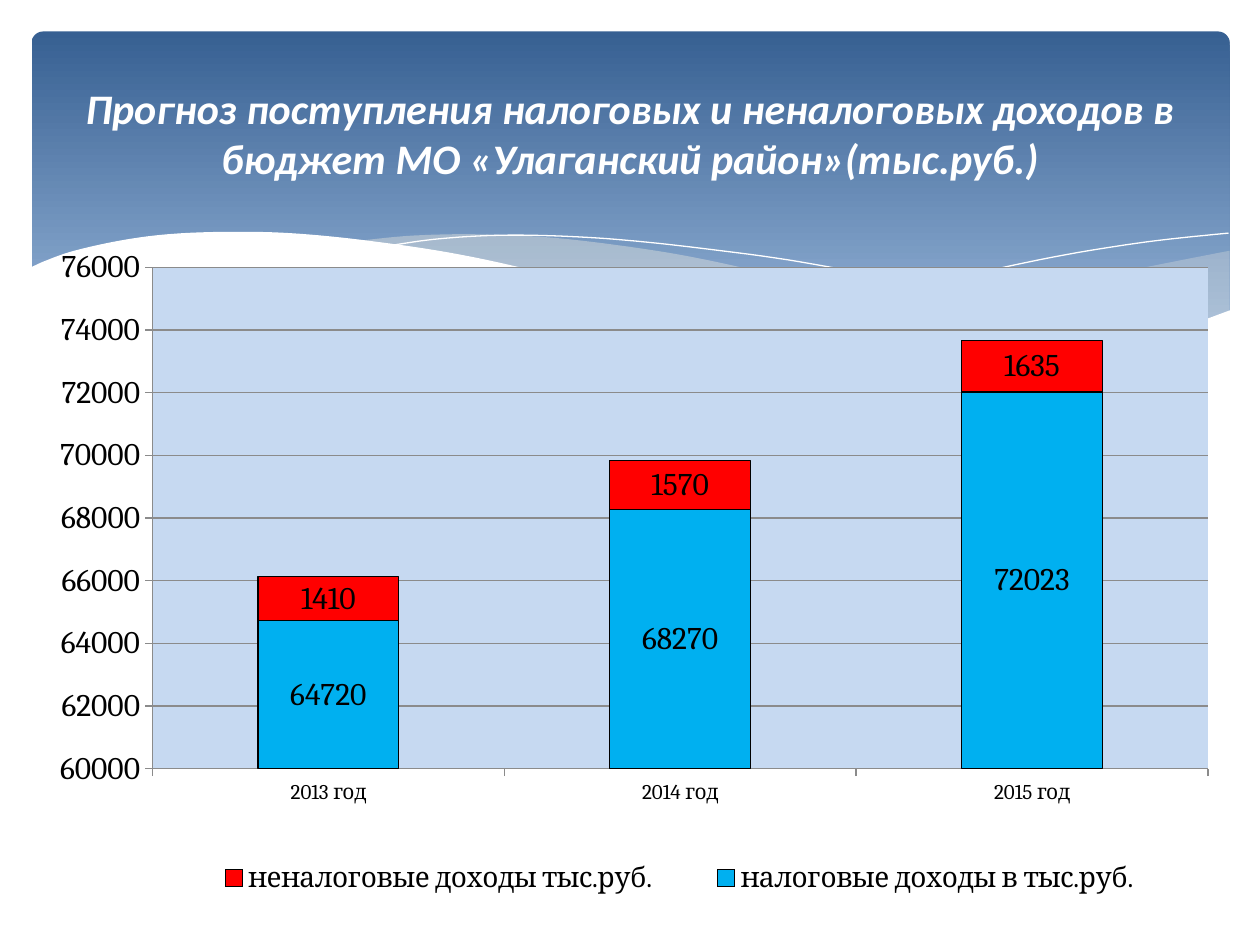
"""Build a slide with a stacked column chart of forecast budget revenue under a wavy banner."""
from dataclasses import dataclass
from typing import Optional

from lxml.etree import SubElement
from pptx import Presentation
from pptx.chart.data import CategoryChartData
from pptx.dml.color import RGBColor
from pptx.enum.chart import XL_CHART_TYPE, XL_LEGEND_POSITION, XL_TICK_MARK
from pptx.enum.shapes import MSO_SHAPE
from pptx.enum.text import MSO_ANCHOR, PP_ALIGN
from pptx.oxml.ns import qn
from pptx.util import Inches, Pt

COLORS = {
    "white": "FFFFFF", "black": "000000", "mist": "EEECE1", "deep": "376092",
    "pale": "95B3D7", "plot": "C6D9F1", "axis": "8B8B8B", "tax": "00B0F0", "other": "FF0000",
}
COLUMNS, ROWS = 100, 75
WIDTH, HEIGHT = Inches(10), Inches(7.5)
STEPS = 8

Point = tuple[float, float]


@dataclass(frozen=True)
class Wave:
    """Smooth edges joined end to end, in grid columns and rows; no fill means an open line."""
    edges: list[list[Point]]
    fill: Optional[str] = None
    opacity: int = 100


@dataclass(frozen=True)
class Series:
    """One stacked part of the columns."""
    name: str
    values: tuple[int, ...]
    color: str


WAVES = [
    Wave([[(97.6, 19.9), (93.5, 20.7), (89.1, 21.6), (83.2, 23), (75.3, 24.8), (66.1, 26.5)],
          [(66.1, 26.5), (71.8, 27.2), (76.9, 27.7), (81.4, 27.8), (86.3, 27.5), (90.5, 26.9),
           (94.2, 25.9), (97.6, 24.7)]], "mist", 29),
    Wave([[(89.3, 27.3), (83.7, 26.5), (77.5, 25.4), (70.6, 24), (62.9, 22.2), (56.9, 20.8),
           (51.4, 19.8), (44.2, 18.9), (38, 18.6), (32.8, 18.7), (28.6, 19.1)],
          [(28.6, 19.1), (34.2, 19.9), (40.4, 21.1), (49.1, 23.2), (56.6, 24.8), (63.4, 26.1),
           (69.5, 27), (76.1, 27.7), (81.8, 27.8), (85.7, 27.7), (89.3, 27.3)]], "mist", 40),
    Wave([[(30.9, 19.5), (34.4, 19), (38.7, 18.7), (43.3, 18.7), (48.9, 19), (55.6, 19.7),
           (63.6, 20.8), (72.7, 22.6), (83.1, 25.1), (90.7, 27.2)]]),
    Wave([[(61.3, 25.7), (67.2, 24.1), (74.8, 22.3), (83.6, 20.4), (91, 19.2), (97.5, 18.5)]]),
    Wave([[(97.7, 24.6), (94, 25.9), (89.9, 26.9), (85, 27.5), (79.3, 27.6), (72.6, 27.2),
           (64.7, 26.2), (55.5, 24.5), (44.7, 22), (36.5, 20.2), (29.2, 19.1), (23, 18.5),
           (17.7, 18.4), (13.2, 18.6), (9.5, 19.1), (5.9, 19.9), (3.6, 20.7), (2.3, 21.3)],
          [(2.3, 32.9), (97.7, 32.9)]], "white"),
]
YEARS = ["2013 год", "2014 год", "2015 год"]
SERIES = [
    Series("налоговые доходы в тыс.руб.", (64720, 68270, 72023), "tax"),
    Series("неналоговые доходы тыс.руб.", (1410, 1570, 1635), "other"),
]
TITLE = "Прогноз поступления налоговых и неналоговых доходов в бюджет МО «Улаганский район»(тыс.руб.)"


def rgb(name: str) -> RGBColor:
    return RGBColor.from_string(COLORS[name])


def grid(column: float, row: float) -> tuple[int, int]:
    return round(WIDTH * column / COLUMNS), round(HEIGHT * row / ROWS)


def smooth(knots: list[Point]) -> list[Point]:
    """Return points of a Catmull-Rom curve through the knots."""
    if len(knots) == 2:
        return knots
    padded = [knots[0], *knots, knots[-1]]
    points = [knots[0]]
    for a, b, c, d in zip(padded, padded[1:], padded[2:], padded[3:]):
        for step in range(1, STEPS + 1):
            t = step / STEPS
            x, y = (
                (2 * q + (r - p) * t + (2 * p - 5 * q + 4 * r - u) * t**2
                 + (3 * q - p - 3 * r + u) * t**3) / 2
                for p, q, r, u in zip(a, b, c, d)
            )
            points.append((x, y))
    return points


def add_banner(s) -> None:
    sp = s.shapes.add_shape(MSO_SHAPE.ROUNDED_RECTANGLE, *grid(2.5, 2.5), *grid(95.1, 27))
    sp.adjustments[0] = 0.034
    sp.shadow.inherit = False
    sp.line.fill.background()
    sp.fill.gradient()
    sp.fill.gradient_angle = 270
    for stop, (position, name) in zip(sp.fill.gradient_stops, [(0, "deep"), (0.9, "pale")]):
        stop.position = position
        stop.color.rgb = rgb(name)


def add_wave(s, wave: Wave) -> None:
    start, *rest = [grid(*point) for edge in wave.edges for point in smooth(edge)]
    builder = s.shapes.build_freeform(*start)
    builder.add_line_segments(rest, close=wave.fill is not None)
    sp = builder.convert_to_shape()
    sp.shadow.inherit = False
    if wave.fill is None:
        sp.fill.background()
        sp.line.color.rgb = rgb("white")
        sp.line.width = Pt(0)
        return
    sp.line.fill.background()
    sp.fill.solid()
    sp.fill.fore_color.rgb = rgb(wave.fill)
    if wave.opacity < 100:
        color = sp.element.spPr.find(f"{qn('a:solidFill')}/{qn('a:srgbClr')}")
        SubElement(color, qn("a:alpha"), val=str(wave.opacity * 1000))


def set_layout(parent, index: int, inner: bool, **shares: float) -> None:
    """Place a chart part by shares of the chart's size."""
    for old in parent.findall(qn("c:layout")):
        parent.remove(old)
    layout = SubElement(parent, qn("c:layout"))
    parent.insert(index, layout)
    manual = SubElement(layout, qn("c:manualLayout"))
    if inner:
        SubElement(manual, qn("c:layoutTarget"), val="inner")
    for side in "xy":
        SubElement(manual, qn(f"c:{side}Mode"), val="edge")
    for side, share in shares.items():
        SubElement(manual, qn(f"c:{side}"), val=str(share))


def add_revenue_chart(s) -> None:
    data = CategoryChartData()
    data.categories = YEARS
    for series in SERIES:
        data.add_series(series.name, series.values)
    chart = s.shapes.add_chart(
        XL_CHART_TYPE.COLUMN_STACKED, *grid(2, 19.4), *grid(95.3, 53.5), data).chart
    chart.has_title = False
    chart.font.name = "Cambria"
    chart.font.size = Pt(18)
    chart.font.color.rgb = rgb("black")

    plot = chart.plots[0]
    plot.gap_width, plot.overlap = 150, 100
    plot.vary_by_categories = False
    for bars, series in zip(plot.series, SERIES):
        bars.format.fill.solid()
        bars.format.fill.fore_color.rgb = rgb(series.color)
        bars.format.line.color.rgb = rgb("black")
        bars.format.line.width = Pt(0.75)
        bars.data_labels.show_value = True

    values = chart.value_axis
    values.minimum_scale, values.maximum_scale, values.major_unit = 60000, 76000, 2000
    values.has_major_gridlines = True
    chart.category_axis.tick_labels.font.size = Pt(12)
    for axis in (values, chart.category_axis):
        axis.major_tick_mark = XL_TICK_MARK.OUTSIDE
        axis.format.line.color.rgb = rgb("axis")
    values.major_gridlines.format.line.color.rgb = rgb("axis")

    chart.has_legend = True
    chart.legend.position = XL_LEGEND_POSITION.RIGHT
    chart.legend.include_in_layout = False
    chart.legend.font.size = Pt(16)
    legend = next(chart.element.iter(qn("c:legend")))
    set_layout(legend, len(legend.findall(qn("c:legendPos"))), False, x=0.12, y=0.9, w=0.85, h=0.08)
    area = next(chart.element.iter(qn("c:plotArea")))
    set_layout(area, 0, True, x=0.106, y=0.034, w=0.879, h=0.744)
    fill = SubElement(SubElement(area, qn("c:spPr")), qn("a:solidFill"))
    SubElement(fill, qn("a:srgbClr"), val=COLORS["plot"])


def set_title(s) -> None:
    title = s.shapes.title
    title.left, title.top = grid(5, 3.7)
    title.width, title.height = grid(90, 13.7)
    tf = title.text_frame
    tf.text = TITLE
    tf.word_wrap = True
    tf.vertical_anchor = MSO_ANCHOR.MIDDLE
    p = tf.paragraphs[0]
    p.alignment = PP_ALIGN.CENTER
    font = p.runs[0].font
    font.name, font.size = "Calibri", Pt(24)
    font.bold = font.italic = True
    font.color.rgb = rgb("white")
    title.element.getparent().append(title.element)


def main() -> None:
    prs = Presentation()
    prs.slide_width, prs.slide_height = WIDTH, HEIGHT
    s = prs.slides.add_slide(prs.slide_layouts[5])
    add_banner(s)
    for wave in WAVES:
        add_wave(s, wave)
    add_revenue_chart(s)
    set_title(s)
    prs.save("out.pptx")


if __name__ == "__main__":
    main()
